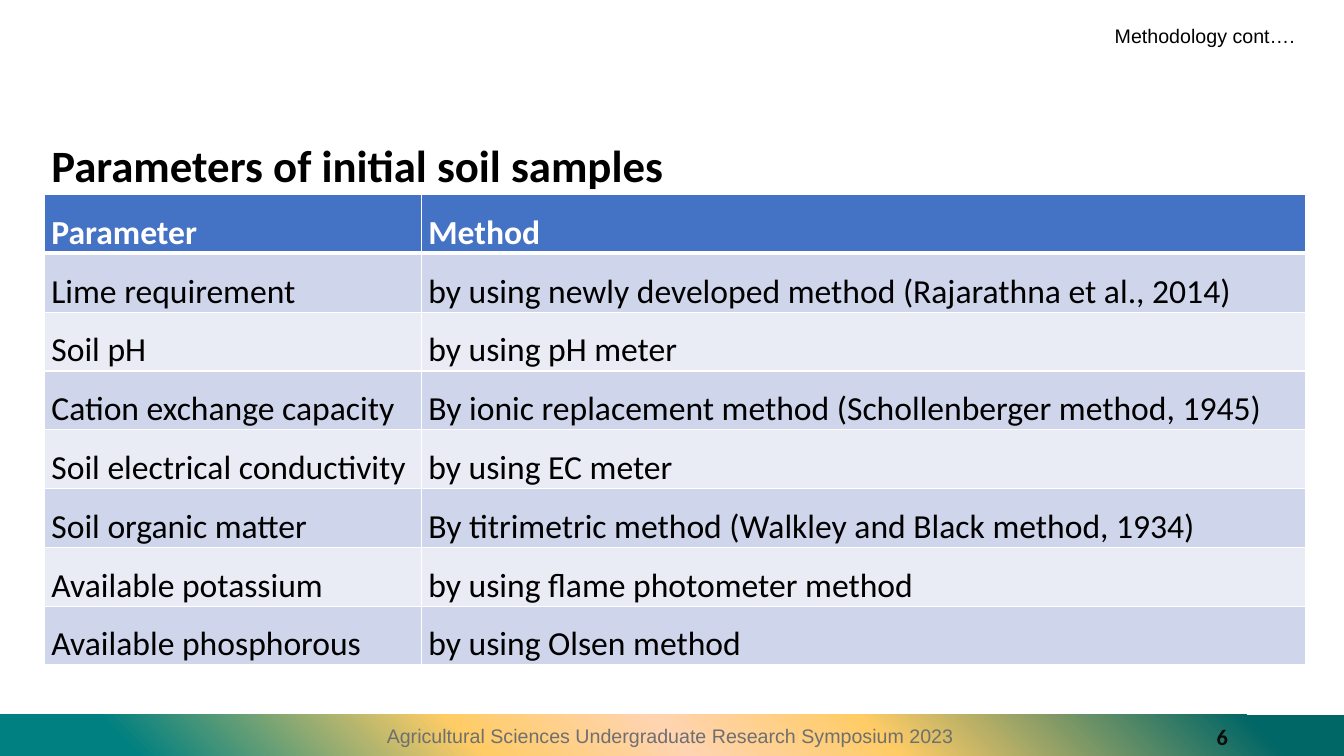
from dataclasses import dataclass

import lxml.etree
import pptx
import pptx.dml.color
import pptx.enum.shapes
import pptx.enum.text
import pptx.oxml
import pptx.oxml.ns
import pptx.util

ALIGN = pptx.enum.text.PP_ALIGN
ANCHOR = pptx.enum.text.MSO_ANCHOR
RECT = pptx.enum.shapes.MSO_SHAPE.RECTANGLE

deck = pptx.Presentation()
deck.slide_width = pptx.util.Inches(13.33)
deck.slide_height = pptx.util.Inches(7.5)
slide = deck.slides.add_slide(deck.slide_layouts[6])


@dataclass
class Box:
    """Place in percent of the slide's width and height."""
    left: float
    top: float
    width: float
    height: float


@dataclass
class Style:
    """Look of a line of text."""
    size: int
    font: str = "Calibri"
    color: str = "000000"
    bold: bool = False
    align: ALIGN = ALIGN.LEFT
    lead: float = 1.0


@dataclass
class Label:
    """Text with its place and look."""
    text: str
    box: Box
    style: Style


LABELS = [
    Label("Parameters of initial soil samples", Box(3.08, 17.47, 51.3, 9.47),
          Style(32, bold=True, lead=0.9)),
    Label("6", Box(69.6, 94.8, 22.5, 5.33),
          Style(16, color="0C0C0C", bold=True, align=ALIGN.RIGHT)),
    Label("Agricultural Sciences Undergraduate Research Symposium 2023",
          Box(8.4, 94.67, 82.95, 5.33),
          Style(14, "Arial", "6F6F6F", align=ALIGN.CENTER)),
    Label("Methodology cont….", Box(82.2, 2.4, 16.43, 4.53), Style(14, "Arial")),
]
ROWS = [
    ("Parameter", "Method"),
    ("Lime requirement", "by using newly developed method (Rajarathna et al., 2014)"),
    ("Soil pH", "by using pH meter"),
    ("Cation exchange capacity",
     "By ionic replacement method (Schollenberger method, 1945)"),
    ("Soil electrical conductivity", "by using EC meter"),
    ("Soil organic matter", "By titrimetric method (Walkley and Black method, 1934)"),
    ("Available potassium", "by using flame photometer method"),
    ("Available phosphorous", "by using Olsen method"),
]
COLS = (28.05, 65.78)
ROW = 7.78
STOPS = [(0, "008080"), (10, "008080"), (35, "FFCC66"), (50, "FFD4B1"),
         (65, "FFCC66"), (93, "006666"), (100, "006666")]
SPACE = 'xmlns:a="http://schemas.openxmlformats.org/drawingml/2006/main"'


def across(share: float) -> int:
    """Turn percent of the slide's width into a length."""
    return round(deck.slide_width * share / 100)


def down(share: float) -> int:
    """Turn percent of the slide's height into a length."""
    return round(deck.slide_height * share / 100)


def place(box: Box) -> tuple[int, int, int, int]:
    """Turn a box into left, top, width and height."""
    return across(box.left), down(box.top), across(box.width), down(box.height)


def paint(target, color: str) -> None:
    """Set a solid colour on a fill."""
    target.solid()
    target.fore_color.rgb = pptx.dml.color.RGBColor.from_string(color)


def write(frame, text: str, style: Style) -> None:
    """Put one styled line into a text frame."""
    frame.text = text
    line = frame.paragraphs[0]
    line.alignment, line.line_spacing = style.align, style.lead
    for run in line.runs:
        run.font.size, run.font.name = pptx.util.Pt(style.size), style.font
        run.font.bold = style.bold
        paint(run.font.fill, style.color)


def draw_bar(box: Box) -> None:
    """Draw the footer bar with its radial blend."""
    bar = slide.shapes.add_shape(RECT, *place(box))
    bar.shadow.inherit = False
    bar.line.fill.background()
    bar.fill.solid()
    stops = "".join(f'<a:gs pos="{pos * 1000}"><a:srgbClr val="{color}"/></a:gs>'
                    for pos, color in STOPS)
    blend = pptx.oxml.parse_xml(
        f'<a:gradFill {SPACE} rotWithShape="1"><a:gsLst>{stops}</a:gsLst>'
        '<a:path path="circle"><a:fillToRect t="100000" r="100000"/></a:path>'
        '</a:gradFill>')
    props = bar.element.spPr
    props.replace(props.find(pptx.oxml.ns.qn("a:solidFill")), blend)


def draw_label(label: Label) -> None:
    """Draw a line of text in its box."""
    frame = slide.shapes.add_textbox(*place(label.box)).text_frame
    frame.word_wrap = True
    frame.vertical_anchor = ANCHOR.MIDDLE
    write(frame, label.text, label.style)


def edge(cell, row: int) -> None:
    """Give a cell white borders, thick below the header."""
    thick = {(0, "B"), (1, "T")}
    props = cell._tc.get_or_add_tcPr()
    for spot, side in enumerate("LRTB"):
        width = pptx.util.Pt(3 if (row, side) in thick else 1)
        props.insert(spot, lxml.etree.fromstring(
            f'<a:ln{side} {SPACE} w="{width}"><a:solidFill>'
            f'<a:srgbClr val="FFFFFF"/></a:solidFill></a:ln{side}>',
            pptx.oxml.oxml_parser))


def draw_table(left: float, top: float) -> None:
    """Draw the table of parameters and methods."""
    box = Box(left, top, sum(COLS), ROW * len(ROWS))
    table = slide.shapes.add_table(len(ROWS), len(COLS), *place(box)).table
    for col, share in zip(table.columns, COLS):
        col.width = across(share)
    for r, texts in enumerate(ROWS):
        table.rows[r].height = down(ROW)
        head = r == 0
        fill = "4472C4" if head else ("E9EBF5", "CFD5EA")[r % 2]
        style = Style(24, color="FFFFFF" if head else "000000", bold=head, lead=1.15)
        for c, text in enumerate(texts):
            cell = table.cell(r, c)
            cell.margin_left = cell.margin_right = pptx.util.Inches(0.07)
            cell.margin_top = cell.margin_bottom = 0
            cell.vertical_anchor = ANCHOR.BOTTOM
            paint(cell.fill, fill)
            edge(cell, r)
            write(cell.text_frame, text, style)


def main() -> None:
    """Build the slide and save it."""
    draw_bar(Box(0, 94.53, 100, 5.47))
    draw_table(3.3, 25.73)
    for label in LABELS:
        draw_label(label)
    deck.save("out.pptx")


if __name__ == "__main__":
    main()
